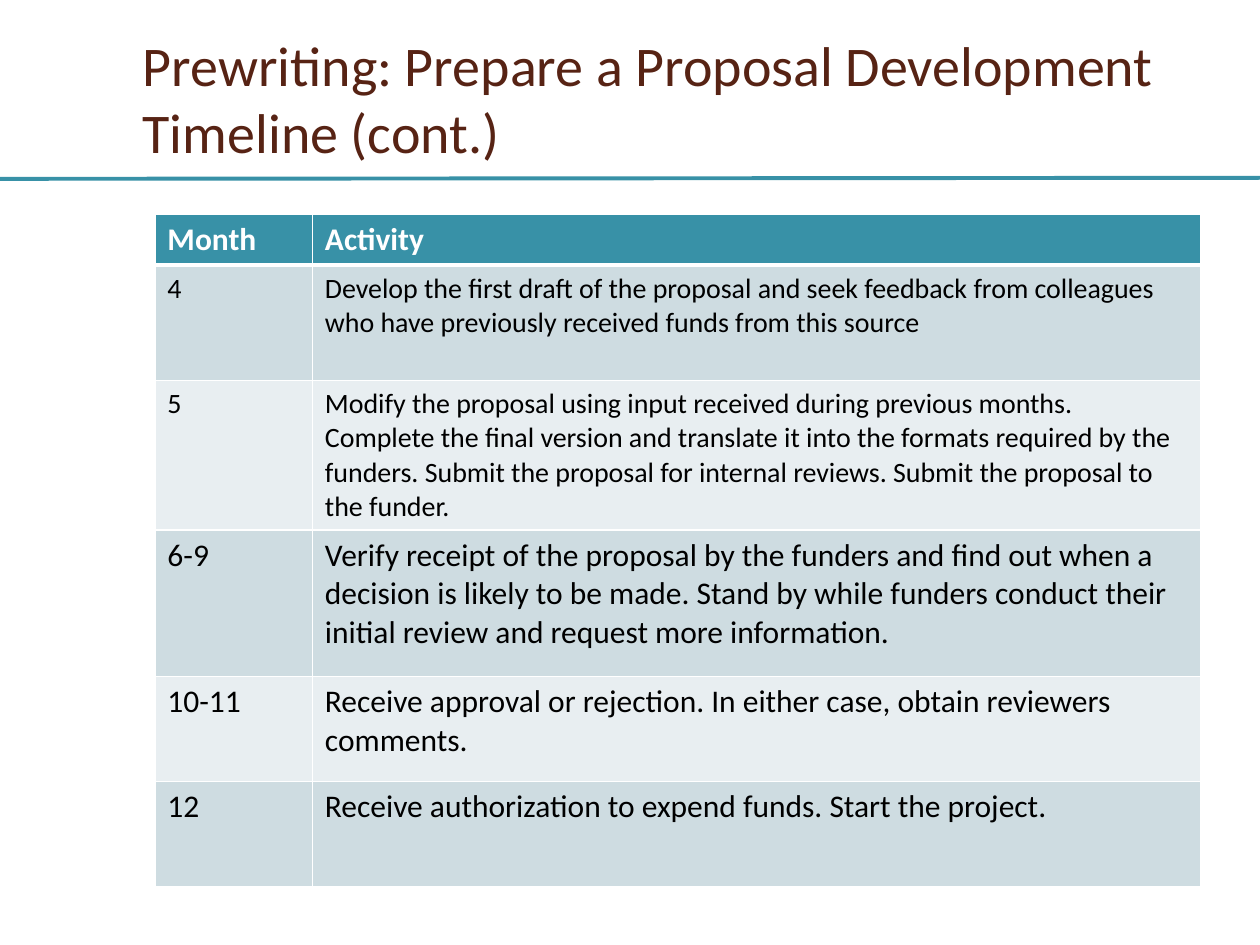
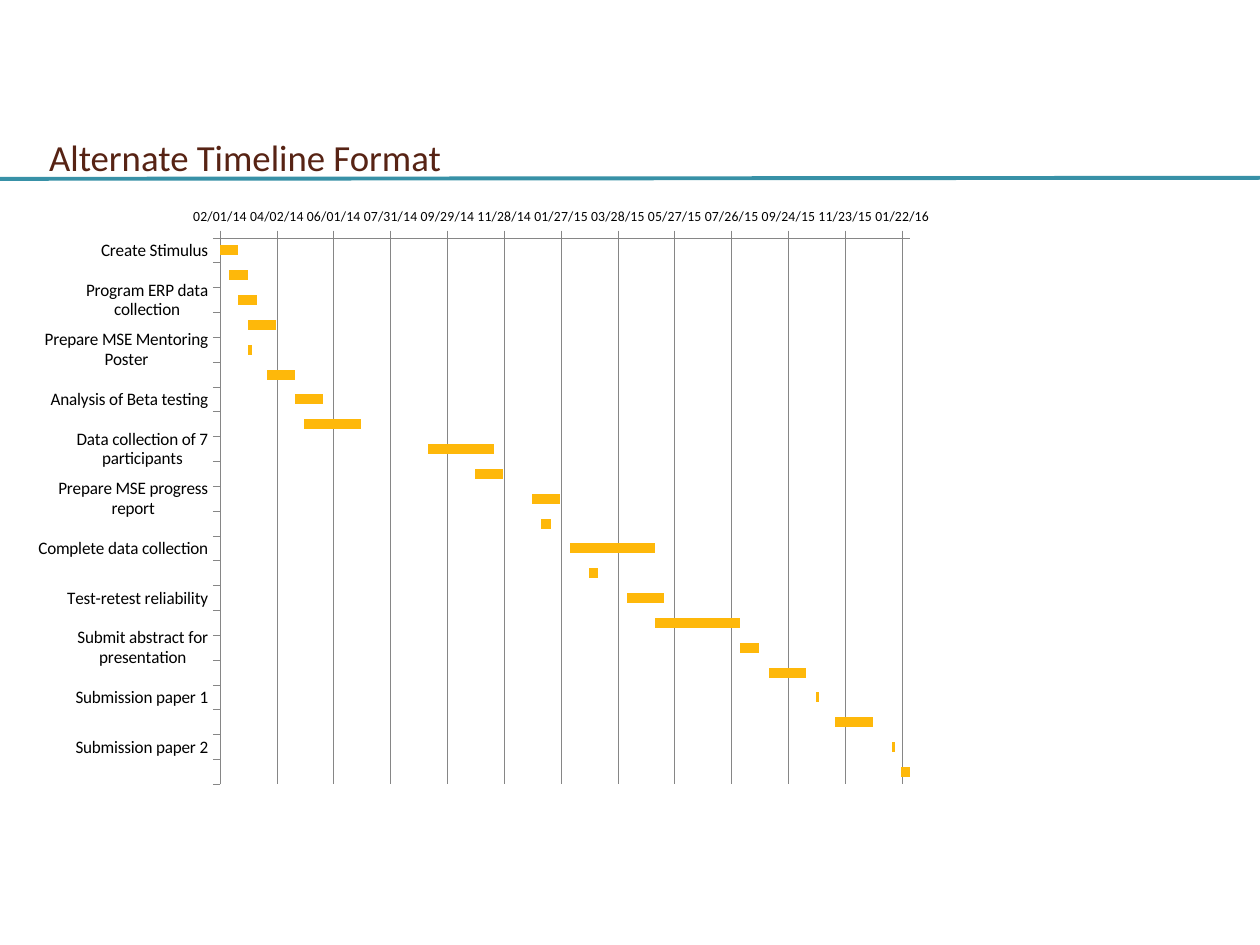
import lxml.etree
import pptx
import pptx.chart.data
import pptx.dml.color
import pptx.enum.chart
import pptx.enum.shapes
import pptx.enum.text
import pptx.oxml
import pptx.oxml.ns
import pptx.util

Pt = pptx.util.Pt
RGBColor = pptx.dml.color.RGBColor
qn = pptx.oxml.ns.qn

FONT = "Calibri"
TEAL = RGBColor(0x38, 0x91, 0xA7)
BROWN = RGBColor(0x57, 0x23, 0x14)
GOLD = RGBColor(0xFE, 0xB8, 0x0A)
BLACK = RGBColor(0, 0, 0)
WHITE = RGBColor(0xFF, 0xFF, 0xFF)
GRAY = RGBColor(0x86, 0x86, 0x86)
BANDS = [RGBColor(0xCE, 0xDC, 0xE1), RGBColor(0xE8, 0xEE, 0xF1)]

SLIDE_WIDTH, SLIDE_HEIGHT = 720, 540

# Month, activity, row height, text size
TIMELINE_ROWS = [
    ("4", "Develop the first draft of the proposal and seek feedback from colleagues "
          "who have previously received funds from this source", 66, 16),
    ("5", "Modify the proposal using input received during previous months. Complete the "
          "final version and translate it into the formats required by the funders. Submit "
          "the proposal for internal reviews. Submit the proposal to the funder.", 85.5, 16),
    ("6-9", "Verify receipt of the proposal by the funders and find out when a decision is "
            "likely to be made. Stand by while funders conduct their initial review and "
            "request more information.", 83.5, 18),
    ("10-11", "Receive approval or rejection. In either case, obtain reviewers comments.",
     60, 18),
    ("12", "Receive authorization to expend funds. Start the project.", 60, 18),
]

FIRST_DAY, LAST_DAY = 41671, 42399  # date serial numbers, from 02/01/14
# Task, start as a date serial number, duration in days
TASKS = [
    ("Create Stimulus", 41670, 20),
    ("Program Psycophysical Responses", 41680, 20),
    ("Program ERP data collection", 41690, 20),
    ("Program fMRI data collection", 41700, 30),
    ("Prepare MSE Mentoring Poster", 41700, 5),
    ("Interface ERP and MRI", 41720, 30),
    ("Analysis of Beta testing", 41750, 30),
    ("Pilot of 3 participants", 41760, 60),
    ("Data collection of 7 participants", 41890, 70),
    ("Analysis of first half of data collection", 41940, 30),
    ("Prepare MSE progress report", 42000, 30),
    ("Submit abstract for presentation", 42010, 10),
    ("Complete data collection", 42040, 90),
    ("Prepare MSE Mentoring Poster", 42060, 10),
    ("Test-retest reliability", 42100, 40),
    ("Data analysis", 42130, 90),
    ("Submit abstract for presentation", 42220, 20),
    ("Draft paper 1", 42250, 40),
    ("Submission paper 1", 42300, 3),
    ("Draft paper 2", 42320, 40),
    ("Submission paper 2", 42380, 3),
    ("Final Report to MSE", 42390, 10),
]


def style_font(font, size, color, bold=False):
    font.name = FONT
    font.size = Pt(size)
    font.bold = bold
    font.color.rgb = color


def add_ruled_slide(presentation):
    """Add a blank slide with the teal rule under the title area."""
    slide = presentation.slides.add_slide(presentation.slide_layouts[6])
    rule = slide.shapes.add_connector(
        pptx.enum.shapes.MSO_CONNECTOR.STRAIGHT, Pt(0), Pt(102.2), Pt(SLIDE_WIDTH), Pt(101.6))
    rule.line.color.rgb = TEAL
    rule.line.width = Pt(2.25)
    lxml.etree.SubElement(rule._element.spPr, qn("a:effectLst"))
    return slide


def add_title(slide, text, box, size):
    shape = slide.shapes.add_textbox(*map(Pt, box))
    frame = shape.text_frame
    frame.word_wrap = True
    frame.vertical_anchor = pptx.enum.text.MSO_ANCHOR.MIDDLE
    run = frame.paragraphs[0].add_run()
    run.text = text
    style_font(run.font, size, BROWN)


def set_borders(cell, **widths):
    """Draw white borders; widths are given by side: L, R, T, B."""
    properties = cell._tc.get_or_add_tcPr()
    for position, side in enumerate("LRTB"):
        line = lxml.etree.Element(qn("a:ln" + side), w=str(Pt(widths.get(side, 1))))
        fill = lxml.etree.SubElement(line, qn("a:solidFill"))
        lxml.etree.SubElement(fill, qn("a:srgbClr"), val=str(WHITE))
        properties.insert(position, line)


def fill_cell(cell, text, fill, size, color, bold=False):
    cell.fill.solid()
    cell.fill.fore_color.rgb = fill
    run = cell.text_frame.paragraphs[0].add_run()
    run.text = text
    style_font(run.font, size, color, bold)


def add_activity_table(slide, box):
    header_height, month_width = 29, 90
    left, top, width, height = box
    table = slide.shapes.add_table(
        len(TIMELINE_ROWS) + 1, 2, Pt(left), Pt(top), Pt(width), Pt(height)).table
    table.columns[0].width = Pt(month_width)
    table.columns[1].width = Pt(width - month_width)
    table.rows[0].height = Pt(header_height)
    for column, heading in enumerate(("Month", "Activity")):
        cell = table.cell(0, column)
        fill_cell(cell, heading, TEAL, 18, WHITE, bold=True)
        set_borders(cell, B=3)
    for row, (month, activity, row_height, size) in enumerate(TIMELINE_ROWS, 1):
        table.rows[row].height = Pt(row_height)
        for column, text in enumerate((month, activity)):
            cell = table.cell(row, column)
            fill_cell(cell, text, BANDS[(row - 1) % 2], size, BLACK)
            set_borders(cell, T=3 if row == 1 else 1)


def set_plot_layout(chart, **fractions):
    """Fix the inner plot area as fractions (x, y, w, h) of the chart."""
    plot_area = chart._chartSpace.chart.plotArea
    for old_layout in plot_area.findall(qn("c:layout")):
        plot_area.remove(old_layout)
    layout = lxml.etree.Element(qn("c:layout"))
    manual = lxml.etree.SubElement(layout, qn("c:manualLayout"))
    settings = {"layoutTarget": "inner", "xMode": "edge", "yMode": "edge", **fractions}
    for name, value in settings.items():
        lxml.etree.SubElement(manual, qn("c:" + name)).set("val", str(value))
    plot_area.insert(0, layout)


def add_gantt_chart(slide, box):
    tasks, start_days, durations = zip(*TASKS)
    data = pptx.chart.data.CategoryChartData()
    data.categories = tasks
    data.add_series("Series 1", start_days)
    data.add_series("Series 2", durations)
    chart = slide.shapes.add_chart(
        pptx.enum.chart.XL_CHART_TYPE.BAR_STACKED, *map(Pt, box), data).chart
    chart.has_title = False
    chart.has_legend = False
    style_font(chart.font, 10, BLACK)

    plot = chart.plots[0]
    plot.vary_by_categories = False
    plot.gap_width = 150
    plot.overlap = 100
    starts, bars = plot.series
    starts.format.fill.background()
    starts.format.line.fill.background()
    bars.format.fill.solid()
    bars.format.fill.fore_color.rgb = GOLD

    task_axis, date_axis = chart.category_axis, chart.value_axis
    for axis, size in ((task_axis, 10), (date_axis, 8)):
        axis.major_tick_mark = pptx.enum.chart.XL_TICK_MARK.OUTSIDE
        axis.minor_tick_mark = pptx.enum.chart.XL_TICK_MARK.NONE
        style_font(axis.tick_labels.font, size, BLACK)
    task_axis.reverse_order = True
    date_axis.minimum_scale = FIRST_DAY
    date_axis.maximum_scale = LAST_DAY
    date_axis.major_unit = 60
    date_axis.has_major_gridlines = True
    date_axis.tick_labels.number_format = "mm/dd/yy;@"
    date_axis.tick_labels.number_format_is_linked = False
    for ruled in (task_axis, date_axis, date_axis.major_gridlines):
        ruled.format.line.color.rgb = GRAY
        ruled.format.line.width = Pt(0.5)
    set_plot_layout(chart, x=0.24, y=0.06, w=0.79, h=0.9)


def main():
    presentation = pptx.Presentation()
    presentation.slide_width = Pt(SLIDE_WIDTH)
    presentation.slide_height = Pt(SLIDE_HEIGHT)

    slide = add_ruled_slide(presentation)
    add_title(slide, "Prewriting: Prepare a Proposal Development Timeline (cont.)",
              (74.5, 0, 629, 111.5), 32)
    add_activity_table(slide, (88.5, 122.5, 597.5, 384))

    slide = add_ruled_slide(presentation)
    add_gantt_chart(slide, (21, 115.2, 510, 347))
    add_title(slide, "Alternate Timeline Format", (21, 69.5, 329, 40), 21)

    presentation.save("out.pptx")


if __name__ == "__main__":
    main()
